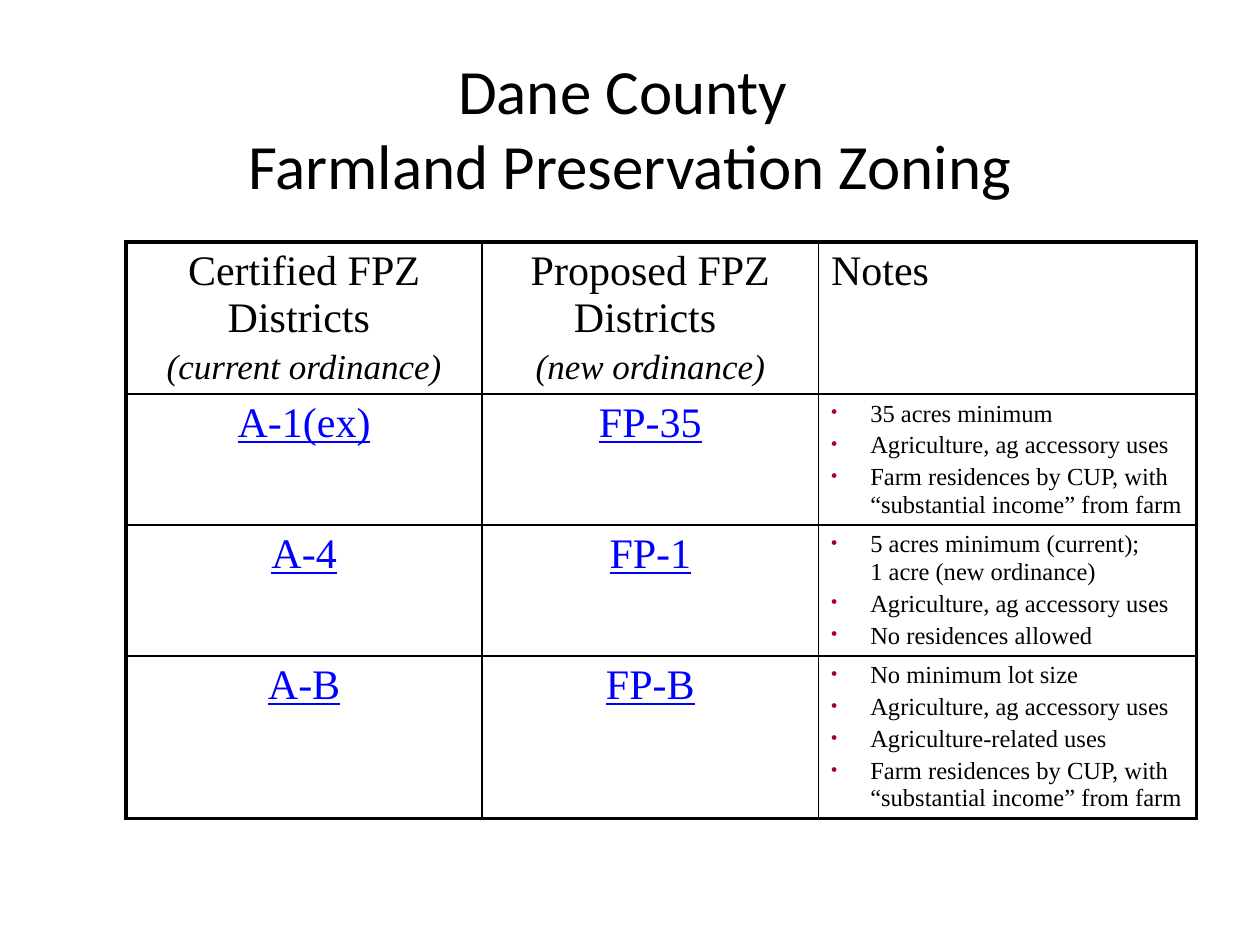
from lxml import etree
from pptx import Presentation
from pptx import util as u
from pptx.dml.color import RGBColor
from pptx.enum import text
from pptx.oxml import ns

COLORS = {"ink": "000000", "link": "0000FF", "bullet": "A50021"}
TITLE = "Dane County \vFarmland Preservation Zoning"
HEADERS = [
    ["Certified FPZ Districts ", "(current ordinance)"],
    ["Proposed FPZ Districts ", "(new ordinance)"],
    ["Notes"],
]
FARM_USES = "Agriculture, ag accessory uses"
FARM_HOMES = "Farm residences by CUP, with “substantial income” from farm"
DISTRICTS = [
    ("A-1(ex)", "FP-35", ["35 acres minimum", FARM_USES, FARM_HOMES]),
    ("A-4", "FP-1", ["5 acres minimum (current);\v1 acre (new ordinance)", FARM_USES, "No residences allowed"]),
    ("A-B", "FP-B", ["No minimum lot size", FARM_USES, "Agriculture-related uses", FARM_HOMES]),
]
COLUMN_WIDTHS = [7.18, 6.78, 7.62]
ROW_HEIGHTS = [3.06, 2.64, 2.64, 3.27]
THIN, THICK = 1, 2.25
CENTER, LEFT = text.PP_ALIGN.CENTER, text.PP_ALIGN.LEFT

SERIF = {"name": "Times New Roman"}
FORMATS = {
    "title": {"name": "Calibri", "size": u.Pt(36)},
    "heading": {**SERIF, "size": u.Pt(24)},
    "subheading": {**SERIF, "size": u.Pt(20), "italic": True},
    "link": {**SERIF, "size": u.Pt(24), "underline": True},
    "note": {**SERIF, "size": u.Pt(14)},
}


def format_paragraph(paragraph, style, alignment):
    paragraph.alignment = alignment
    for run in paragraph.runs:
        for key, value in FORMATS[style].items():
            setattr(run.font, key, value)
        color = COLORS["link" if style == "link" else "ink"]
        run.font.color.rgb = RGBColor.from_string(color)


def add_bullet(paragraph):
    properties = paragraph._p.get_or_add_pPr()
    indent = u.Cm(0.79)
    properties.set("marL", str(indent))
    properties.set("indent", str(-indent))
    color = etree.SubElement(properties, ns.qn("a:buClr"))
    etree.SubElement(color, ns.qn("a:srgbClr"), val=COLORS["bullet"])
    etree.SubElement(properties, ns.qn("a:buSzPct"), val="75000")
    etree.SubElement(properties, ns.qn("a:buChar"), char="•")


def fill_cell(cell, lines, styles, alignment):
    frame = cell.text_frame
    for index, (line, style) in enumerate(zip(lines, styles)):
        paragraph = frame.add_paragraph() if index else frame.paragraphs[0]
        paragraph.text = line
        format_paragraph(paragraph, style, alignment)
        if index:
            paragraph.space_before = u.Pt(FORMATS[style]["size"].pt * 0.2)
        if style == "note":
            add_bullet(paragraph)


def draw_borders(cell, widths):
    properties = cell._tc.get_or_add_tcPr()
    for position, (side, width) in enumerate(widths.items()):
        line = etree.Element(ns.qn(f"a:ln{side}"), w=str(u.Pt(width)))
        fill = etree.SubElement(line, ns.qn("a:solidFill"))
        etree.SubElement(fill, ns.qn("a:srgbClr"), val=COLORS["ink"])
        properties.insert(position, line)


def add_title(slide):
    title = slide.shapes.title
    place = {"left": 3.81, "top": 0.91, "width": 17.78, "height": 3.3}
    for key, value in place.items():
        setattr(title, key, u.Cm(value))
    title.text_frame.text = TITLE
    title.text_frame.vertical_anchor = text.MSO_ANCHOR.MIDDLE
    format_paragraph(title.text_frame.paragraphs[0], "title", CENTER)


def add_district_table(slide):
    last_row, last_column = len(ROW_HEIGHTS) - 1, len(COLUMN_WIDTHS) - 1
    table = slide.shapes.add_table(
        last_row + 1, last_column + 1, u.Cm(2.54), u.Cm(4.88),
        u.Cm(sum(COLUMN_WIDTHS)), u.Cm(sum(ROW_HEIGHTS)),
    ).table
    table.first_row = table.horz_banding = False
    for column, width in zip(table.columns, COLUMN_WIDTHS):
        column.width = u.Cm(width)
    for row, height in zip(table.rows, ROW_HEIGHTS):
        row.height = u.Cm(height)

    for column, lines in enumerate(HEADERS):
        alignment = LEFT if column == last_column else CENTER
        fill_cell(table.cell(0, column), lines, ["heading", "subheading"], alignment)
    for row, (current, proposed, notes) in enumerate(DISTRICTS, 1):
        fill_cell(table.cell(row, 0), [current], ["link"], CENTER)
        fill_cell(table.cell(row, 1), [proposed], ["link"], CENTER)
        fill_cell(table.cell(row, 2), notes, ["note"] * len(notes), LEFT)

    for row in range(last_row + 1):
        for column in range(last_column + 1):
            cell = table.cell(row, column)
            cell.fill.background()
            draw_borders(cell, {
                "L": THICK if column == 0 else THIN,
                "R": THICK if column == last_column else THIN,
                "T": THICK if row == 0 else THIN,
                "B": THICK if row == last_row else THIN,
            })


def main():
    presentation = Presentation()
    presentation.slide_width = u.Cm(25.4)
    presentation.slide_height = u.Cm(19.05)
    slide = presentation.slides.add_slide(presentation.slide_layouts[5])
    add_title(slide)
    add_district_table(slide)
    presentation.save("out.pptx")


if __name__ == "__main__":
    main()
